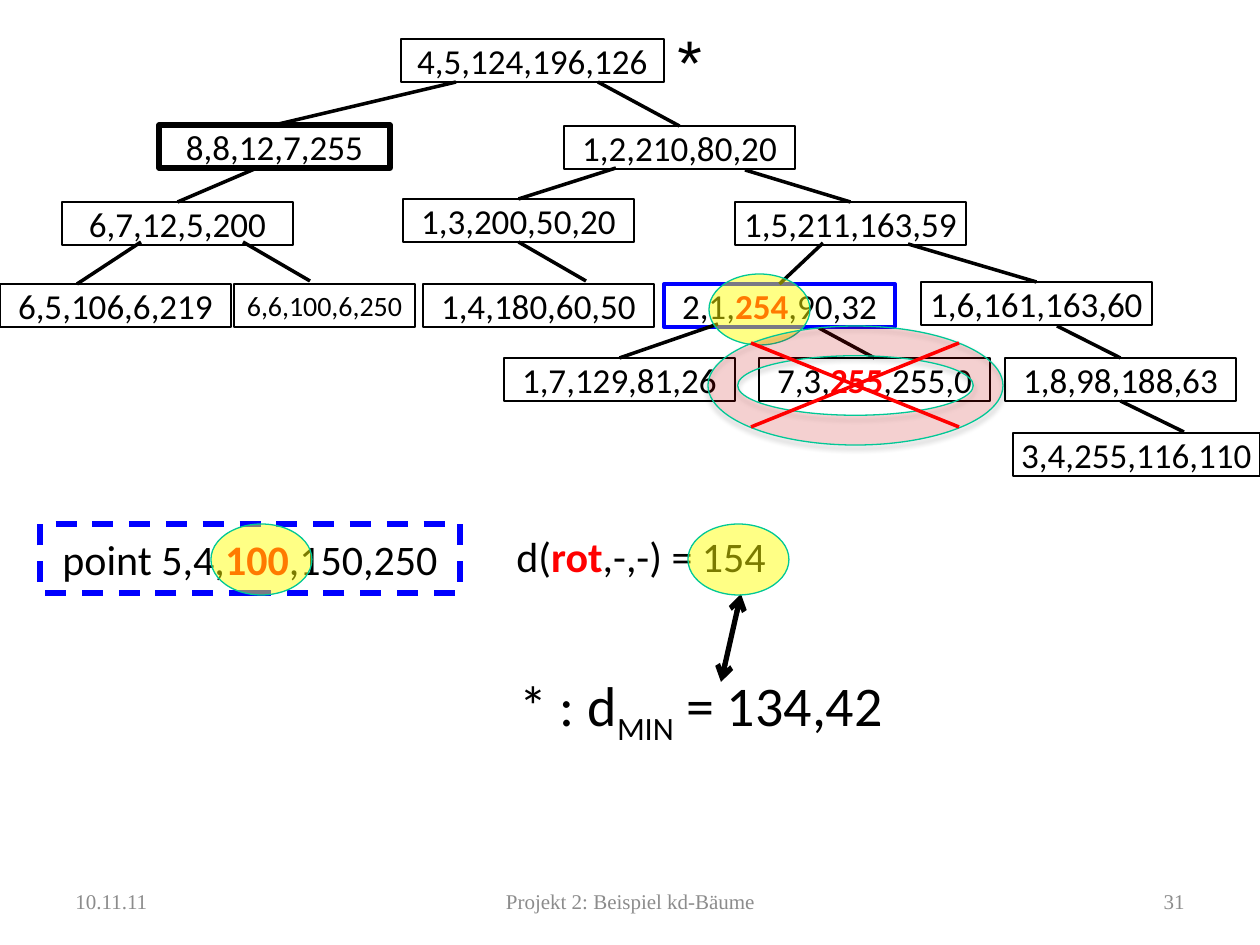
from dataclasses import dataclass

from lxml.etree import SubElement
from pptx import Presentation
from pptx.dml.color import RGBColor
from pptx.enum.dml import MSO_LINE
from pptx.enum.shapes import MSO_CONNECTOR, MSO_SHAPE
from pptx.enum.text import MSO_ANCHOR, MSO_AUTO_SIZE, PP_ALIGN
from pptx.oxml.ns import qn
from pptx.util import Emu, Pt


@dataclass(frozen=True)
class Theme:
    black: str = "000000"
    white: str = "FFFFFF"
    blue: str = "0000FF"
    red: str = "FF0000"
    yellow: str = "FFFF00"
    green: str = "00C896"
    gray: str = "8C8C8C"
    body: str = "Calibri"
    mark: str = "Arial"
    footer: str = "Times New Roman"
    footer_size: int = 12
    small: int = 16
    node: int = 20
    point: int = 24
    result: int = 32
    star: int = 36


T = Theme()
NODE_W, NODE_H = 231, 43
TOP, BOTTOM = 0, 2

# name: left, top, text, then options that differ from a plain node
NODES = {
    "root": (401, 39, "4,5,124,196,126", dict(w=263, weight=1.5)),
    "L": (159, 125, "8,8,12,7,255", dict(weight=3)),
    "R": (564, 126, "1,2,210,80,20", {}),
    "LL": (62, 202, "6,7,12,5,200", {}),
    "RL": (403, 199, "1,3,200,50,20", {}),
    "RR": (735, 202, "1,5,211,163,59", {}),
    "LLL": (0, 284, "6,5,106,6,219", {}),
    "LLR": (234, 284, "6,6,100,6,250", dict(w=181, size=T.small)),
    "RLR": (423, 284, "1,4,180,60,50", {}),
    "RRL": (664, 284, "2,1,*254*,90,32", dict(line=T.blue, weight=2.25)),
    "RRR": (921, 282, "1,6,161,163,60", {}),
    "RRLL": (504, 358, "1,7,129,81,26", {}),
    "RRLR": (759, 358, "7,3,*255*,255,0", {}),
    "RRRR": (1005, 358, "1,8,98,188,63", {}),
    "RRRRR": (1013, 433, "3,4,255,116,110", dict(w=247)),
}

# Each end is a point, or a node name: bottom middle of a parent, top middle of a child
EDGES = [
    ((456, 82), "L"), ((598, 82), "R"),
    ((257, 168), "LL"), ((616, 168), "RL"), ((745, 170), "RR"),
    ((141, 242), (77, 284)), ((243, 242), (310, 281)), ("RL", (586, 281)),
    ((823, 243), "RRL"), ((908, 244), "RRR"),
    ((718, 324), "RRLL"), ((819, 328), "RRLR"), ((1057, 326), "RRRR"),
    ("RRRR", (1184, 432)),
]


def px(*values):
    return [Emu(round(v * 914400 / 126)) for v in values]


def rgb(color):
    return RGBColor.from_string(color)


def add_run(p, text, size, color=T.black, font=T.body, bold=False):
    r = p.add_run()
    r.text = text
    r.font.size, r.font.name, r.font.bold = Pt(size), font, bold
    r.font.color.rgb = rgb(color)
    return r


def add_marked_runs(p, text, size):
    """Parts between asterisks become bold red."""
    for i, part in enumerate(text.split("*")):
        marked = i % 2 == 1
        add_run(p, part, size, T.red if marked else T.black, bold=marked)


def add_outlined(shapes, kind, box, fill, line, weight, alpha=None):
    sp = shapes.add_shape(kind, *px(*box))
    sp.shadow.inherit = False
    sp.fill.solid()
    sp.fill.fore_color.rgb = rgb(fill)
    sp.line.color.rgb = rgb(line)
    sp.line.width = Pt(weight)
    if alpha is not None:
        color = sp.fill._xPr.find(qn("a:solidFill"))[0]
        SubElement(color, qn("a:alpha"), val=str(alpha * 1000))
    return sp


def add_box(shapes, box, text, size, line=T.black, weight=0.75):
    sp = add_outlined(shapes, MSO_SHAPE.RECTANGLE, box, T.white, line, weight)
    tf = sp.text_frame
    tf.word_wrap = True
    tf.vertical_anchor = MSO_ANCHOR.MIDDLE
    p = tf.paragraphs[0]
    p.alignment = PP_ALIGN.CENTER
    add_marked_runs(p, text, size)
    return sp


def add_node(shapes, x, y, text, w=NODE_W, size=T.node, line=T.black, weight=0.75):
    sp = add_box(shapes, (x, y, w, NODE_H), text, size, line, weight)
    tf = sp.text_frame
    tf.margin_left, tf.margin_right, tf.margin_top, tf.margin_bottom = px(5, 5, 0, 0)
    return sp


def add_line(shapes, start, end, color=T.black, weight=2):
    c = shapes.add_connector(MSO_CONNECTOR.STRAIGHT, *px(*start, *end))
    c.line.color.rgb = rgb(color)
    c.line.width = Pt(weight)
    SubElement(c._element.spPr, qn("a:effectLst"))
    return c


def add_edge(shapes, nodes, start, end):
    c = add_line(shapes, (0, 0) if start in nodes else start,
                 (0, 0) if end in nodes else end)
    if start in nodes:
        c.begin_connect(nodes[start], BOTTOM)
    if end in nodes:
        c.end_connect(nodes[end], TOP)


def add_label(shapes, box):
    """Unwrapped text box that grows with its text; returns its paragraph."""
    tf = shapes.add_textbox(*px(*box)).text_frame
    tf.word_wrap = False
    tf.auto_size = MSO_AUTO_SIZE.SHAPE_TO_FIT_TEXT
    return tf.paragraphs[0]


def add_footer(shapes, x, w, text, align):
    tf = shapes.add_textbox(*px(x, 876, w, 50)).text_frame
    tf.word_wrap = True
    tf.vertical_anchor = MSO_ANCHOR.MIDDLE
    p = tf.paragraphs[0]
    p.alignment = align
    add_run(p, text, T.footer_size, T.gray, T.footer)


def add_rejection(shapes):
    """Shadowed ring and red cross, grouped."""
    group = shapes.add_group_shape().shapes
    ring = add_outlined(group, MSO_SHAPE.DONUT, (708, 326, 295, 119),
                        T.red, T.green, 0.75, alpha=14)
    effects = ring._element.spPr.find(qn("a:effectLst"))
    shadow = SubElement(effects, qn("a:outerShdw"), blurRad=str(Pt(3.1)),
                        dist=str(Pt(1.8)), dir="5400000", rotWithShape="0")
    color = SubElement(shadow, qn("a:srgbClr"), val=T.black)
    SubElement(color, qn("a:alpha"), val="35000")
    left, top, right, bottom = 751, 343, 959, 427
    add_line(group, (right, top), (left, bottom), T.red)
    add_line(group, (left, top), (right, bottom), T.red)


def main():
    prs = Presentation()
    prs.slide_width, prs.slide_height = px(1260, 945)
    shapes = prs.slides.add_slide(prs.slide_layouts[6]).shapes

    # Footer
    add_footer(shapes, 63, 294, "10.11.11", PP_ALIGN.LEFT)
    add_footer(shapes, 431, 399, "Projekt 2: Beispiel kd-Bäume", PP_ALIGN.CENTER)
    add_footer(shapes, 903, 294, "31", PP_ALIGN.RIGHT)

    # Tree
    nodes = {name: add_node(shapes, x, y, text, **options)
             for name, (x, y, text, options) in NODES.items()}
    for start, end in EDGES:
        add_edge(shapes, nodes, start, end)
    add_run(add_label(shapes, (665, 16, 50, 89)), "*", T.star, font=T.mark)

    # Query point
    query = add_box(shapes, (40, 524, 420, 69), "point 5,4,*100*,150,250",
                    T.point, T.blue, 3)
    query.line.dash_style = MSO_LINE.DASH

    # Distance and current minimum
    add_marked_runs(add_label(shapes, (504, 524, 278, 63)),
                    "d(*rot*,-,-) = 154", T.point)
    p = add_label(shapes, (507, 664, 401, 81))
    add_run(p, "* : d", T.result)
    add_run(p, "MIN", T.result).font._element.set("baseline", "-25000")
    add_run(p, " = 134,42", T.result)
    arrow = add_line(shapes, (741, 594), (721, 682), weight=3)
    for end in ("a:headEnd", "a:tailEnd"):
        SubElement(arrow.line._get_or_add_ln(), qn(end), type="arrow")

    # Highlights
    for x, y in ((709, 274), (211, 524), (688, 524)):
        add_outlined(shapes, MSO_SHAPE.OVAL, (x, y, 101, 71),
                     T.yellow, T.green, 0.75, alpha=48)
    add_rejection(shapes)

    prs.save("out.pptx")


if __name__ == "__main__":
    main()
